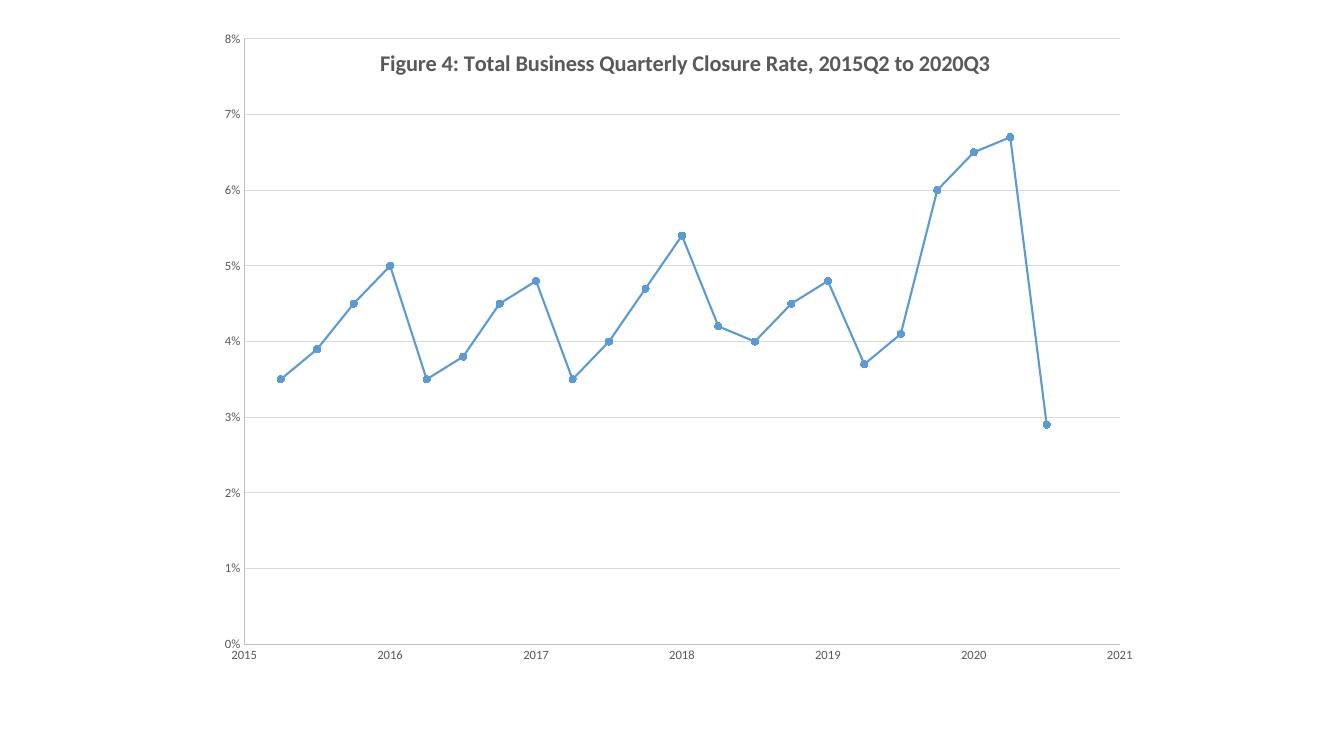
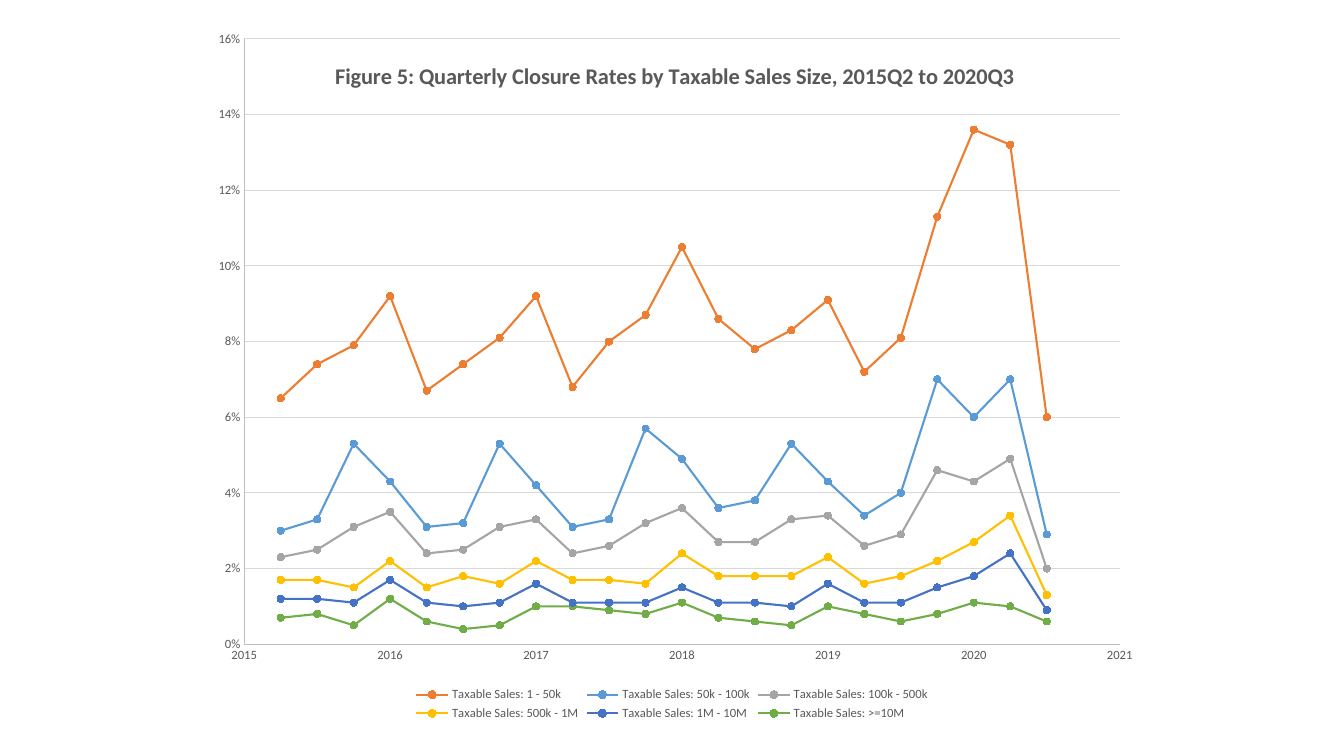
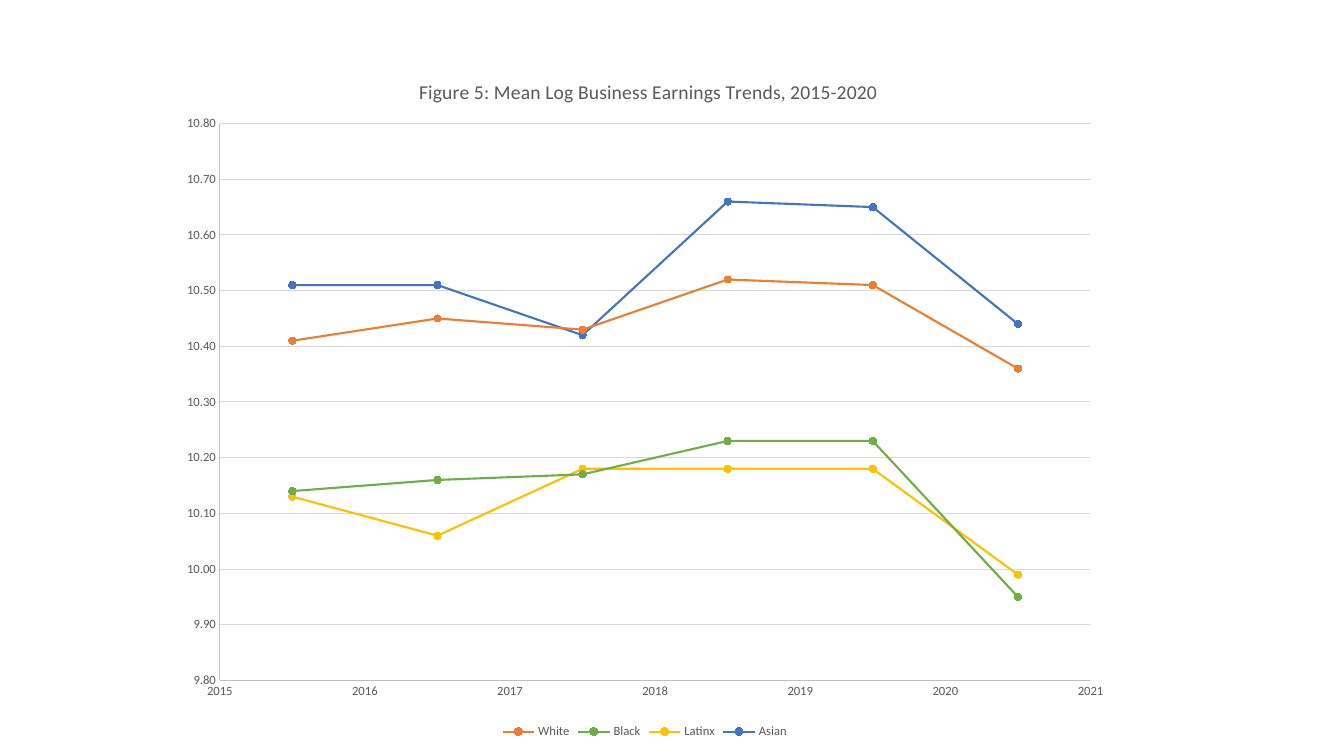
from dataclasses import dataclass

from lxml.etree import SubElement
from pptx import Presentation
from pptx.chart.axis import ValueAxis
from pptx.chart.chart import Chart
from pptx.chart.data import XyChartData
from pptx.chart.series import XySeries
from pptx.dml.color import RGBColor
from pptx.dml.line import LineFormat
from pptx.enum.chart import XL_CHART_TYPE, XL_LEGEND_POSITION, XL_MARKER_STYLE, XL_TICK_MARK
from pptx.oxml.ns import qn
from pptx.text.text import Font
from pptx.util import Pt

FONT = "Calibri"
TEXT_GREY = "595959"
AXIS_GREY = "BFBFBF"
GRID_GREY = "D9D9D9"
ORANGE = "ED7D31"
LIGHT_BLUE = "5B9BD5"
GREY = "A5A5A5"
GOLD = "FFC000"
BLUE = "4472C4"
GREEN = "70AD47"

CHART_WIDTH = 682
CHART_HEIGHT = 495.4
CLOSURE_PLOT = (0.052, 0.011, 0.917, 0.873)
EARNINGS_PLOT = (0.055, 0.107, 0.912, 0.803)


@dataclass(frozen=True)
class Trend:
    name: str
    color: str
    values: tuple[float, ...]


@dataclass(frozen=True)
class Scale:
    minimum: float
    maximum: float
    step: float
    number_format: str


@dataclass(frozen=True)
class Figure:
    title: str
    title_size: float
    title_bold: bool
    title_corner: tuple[float, float]
    left: float
    top: float
    plot_box: tuple[float, float, float, float]
    first_year: float
    year_step: float
    scale: Scale
    trends: tuple[Trend, ...]


YEARS = Scale(2015, 2021, 1, "0")

FIGURES = (
    Figure(
        "Figure 4: Total Business Quarterly Closure Rate, 2015Q2 to 2020Q3",
        16, True, (0.19, 0.018), 139, 22.3, CLOSURE_PLOT, 2015.25, 0.25,
        Scale(0, 0.08, 0.01, "0%"),
        (
            Trend("Series 1", LIGHT_BLUE, (
                0.035, 0.039, 0.045, 0.05, 0.035, 0.038, 0.045, 0.048, 0.035, 0.04, 0.047,
                0.054, 0.042, 0.04, 0.045, 0.048, 0.037, 0.041, 0.06, 0.065, 0.067, 0.029)),
        ),
    ),
    Figure(
        "Figure 5: Quarterly Closure Rates by Taxable Sales Size, 2015Q2 to 2020Q3",
        16, True, (0.143, 0.037), 139, 22.3, CLOSURE_PLOT, 2015.25, 0.25,
        Scale(0, 0.16, 0.02, "0%"),
        (
            Trend("Taxable Sales: 1 - 50k", ORANGE, (
                0.065, 0.074, 0.079, 0.092, 0.067, 0.074, 0.081, 0.092, 0.068, 0.08, 0.087,
                0.105, 0.086, 0.078, 0.083, 0.091, 0.072, 0.081, 0.113, 0.136, 0.132, 0.06)),
            Trend("Taxable Sales: 50k - 100k", LIGHT_BLUE, (
                0.03, 0.033, 0.053, 0.043, 0.031, 0.032, 0.053, 0.042, 0.031, 0.033, 0.057,
                0.049, 0.036, 0.038, 0.053, 0.043, 0.034, 0.04, 0.07, 0.06, 0.07, 0.029)),
            Trend("Taxable Sales: 100k - 500k", GREY, (
                0.023, 0.025, 0.031, 0.035, 0.024, 0.025, 0.031, 0.033, 0.024, 0.026, 0.032,
                0.036, 0.027, 0.027, 0.033, 0.034, 0.026, 0.029, 0.046, 0.043, 0.049, 0.02)),
            Trend("Taxable Sales: 500k - 1M", GOLD, (
                0.017, 0.017, 0.015, 0.022, 0.015, 0.018, 0.016, 0.022, 0.017, 0.017, 0.016,
                0.024, 0.018, 0.018, 0.018, 0.023, 0.016, 0.018, 0.022, 0.027, 0.034, 0.013)),
            Trend("Taxable Sales: 1M - 10M", BLUE, (
                0.012, 0.012, 0.011, 0.017, 0.011, 0.01, 0.011, 0.016, 0.011, 0.011, 0.011,
                0.015, 0.011, 0.011, 0.01, 0.016, 0.011, 0.011, 0.015, 0.018, 0.024, 0.009)),
            Trend("Taxable Sales: >=10M", GREEN, (
                0.007, 0.008, 0.005, 0.012, 0.006, 0.004, 0.005, 0.01, 0.01, 0.009, 0.008,
                0.011, 0.007, 0.006, 0.005, 0.01, 0.008, 0.006, 0.008, 0.011, 0.01, 0.006)),
        ),
    ),
    Figure(
        "Figure 5: Mean Log Business Earnings Trends, 2015-2020",
        14, False, (0.26, 0.037), 119.5, 35.3, EARNINGS_PLOT, 2015.5, 1,
        Scale(9.8, 10.8, 0.1, "0.00"),
        (
            Trend("White", ORANGE, (10.41, 10.45, 10.43, 10.52, 10.51, 10.36)),
            Trend("Black", GREEN, (10.14, 10.16, 10.17, 10.23, 10.23, 9.95)),
            Trend("Latinx", GOLD, (10.13, 10.06, 10.18, 10.18, 10.18, 9.99)),
            Trend("Asian", BLUE, (10.51, 10.51, 10.42, 10.66, 10.65, 10.44)),
        ),
    ),
)


def rgb(color: str) -> RGBColor:
    return RGBColor.from_string(color)


def style_font(font: Font, size: float, color: str = TEXT_GREY, bold: bool = False) -> None:
    font.name = FONT
    font.size = Pt(size)
    font.bold = bold
    font.color.rgb = rgb(color)


def style_line(line: LineFormat, color: str, width: float) -> None:
    line.color.rgb = rgb(color)
    line.width = Pt(width)


def place_part(owner, index: int, settings: dict[str, str | float]) -> None:
    for automatic in owner.findall(qn("c:layout")):
        owner.remove(automatic)
    layout = SubElement(owner, qn("c:layout"))
    owner.insert(index, layout)
    manual = SubElement(layout, qn("c:manualLayout"))
    for tag, value in settings.items():
        SubElement(manual, qn(f"c:{tag}")).set("val", str(value))


def style_axis(axis: ValueAxis, scale: Scale, has_grid: bool) -> None:
    axis.minimum_scale = scale.minimum
    axis.maximum_scale = scale.maximum
    axis.major_unit = scale.step
    axis.major_tick_mark = XL_TICK_MARK.NONE
    axis.minor_tick_mark = XL_TICK_MARK.NONE
    axis.tick_labels.number_format = scale.number_format
    axis.tick_labels.number_format_is_linked = False
    style_font(axis.tick_labels.font, 9)
    style_line(axis.format.line, AXIS_GREY, 0.75)
    axis.has_major_gridlines = has_grid
    if has_grid:
        style_line(axis.major_gridlines.format.line, GRID_GREY, 0.75)


def style_trend(series: XySeries, color: str) -> None:
    style_line(series.format.line, color, 1.5)
    series.marker.style = XL_MARKER_STYLE.CIRCLE
    series.marker.size = 5
    series.marker.format.fill.solid()
    series.marker.format.fill.fore_color.rgb = rgb(color)
    style_line(series.marker.format.line, color, 0.75)


def add_heading(chart: Chart, figure: Figure) -> None:
    chart.has_title = True
    heading = chart.chart_title
    heading.text_frame.text = figure.title
    for run in heading.text_frame.paragraphs[0].runs:
        style_font(run.font, figure.title_size, bold=figure.title_bold)
    x, y = figure.title_corner
    place_part(heading.element, 1, {"xMode": "edge", "yMode": "edge", "x": x, "y": y})
    heading.element.find(qn("c:overlay")).set("val", "1")


def add_legend(chart: Chart) -> None:
    chart.has_legend = True
    chart.legend.position = XL_LEGEND_POSITION.BOTTOM
    chart.legend.include_in_layout = False
    style_font(chart.legend.font, 9)


def add_figure(slide, figure: Figure) -> None:
    chart_data = XyChartData()
    for trend in figure.trends:
        points = chart_data.add_series(trend.name)
        for position, value in enumerate(trend.values):
            points.add_data_point(figure.first_year + position * figure.year_step, value)
    chart = slide.shapes.add_chart(
        XL_CHART_TYPE.XY_SCATTER_LINES,
        Pt(figure.left), Pt(figure.top), Pt(CHART_WIDTH), Pt(CHART_HEIGHT),
        chart_data,
    ).chart
    style_font(chart.font, 10, "000000")
    add_heading(chart, figure)
    chart.has_legend = False
    if len(figure.trends) > 1:
        add_legend(chart)
    style_axis(chart.category_axis, YEARS, False)
    style_axis(chart.value_axis, figure.scale, True)
    plot = chart.plots[0]
    plot.vary_by_categories = False
    for series, trend in zip(plot.series, figure.trends):
        style_trend(series, trend.color)
    x, y, width, height = figure.plot_box
    place_part(chart.element.find(".//" + qn("c:plotArea")), 0, {
        "layoutTarget": "inner", "xMode": "edge", "yMode": "edge",
        "x": x, "y": y, "w": width, "h": height,
    })


def main() -> None:
    presentation = Presentation()
    presentation.slide_width = Pt(960)
    presentation.slide_height = Pt(540)
    blank_layout = presentation.slide_layouts[6]
    for figure in FIGURES:
        add_figure(presentation.slides.add_slide(blank_layout), figure)
    presentation.save("out.pptx")


if __name__ == "__main__":
    main()
